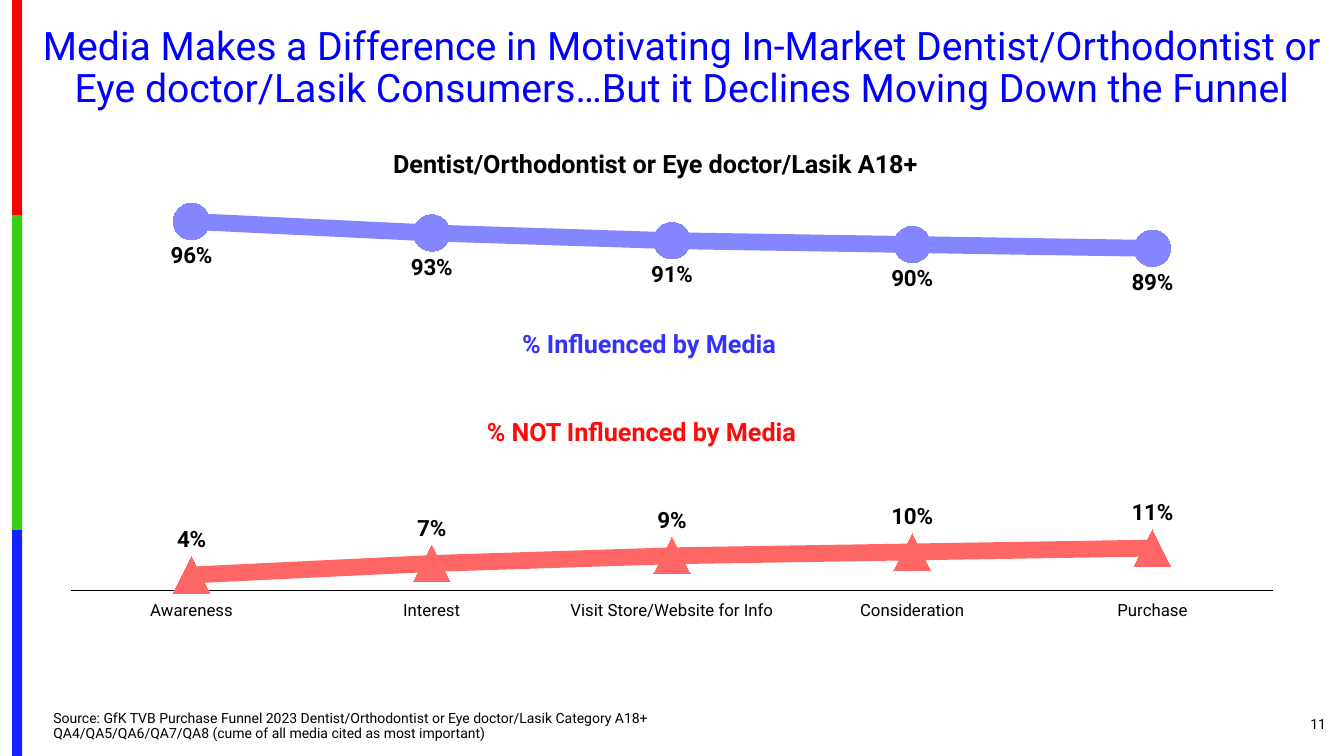
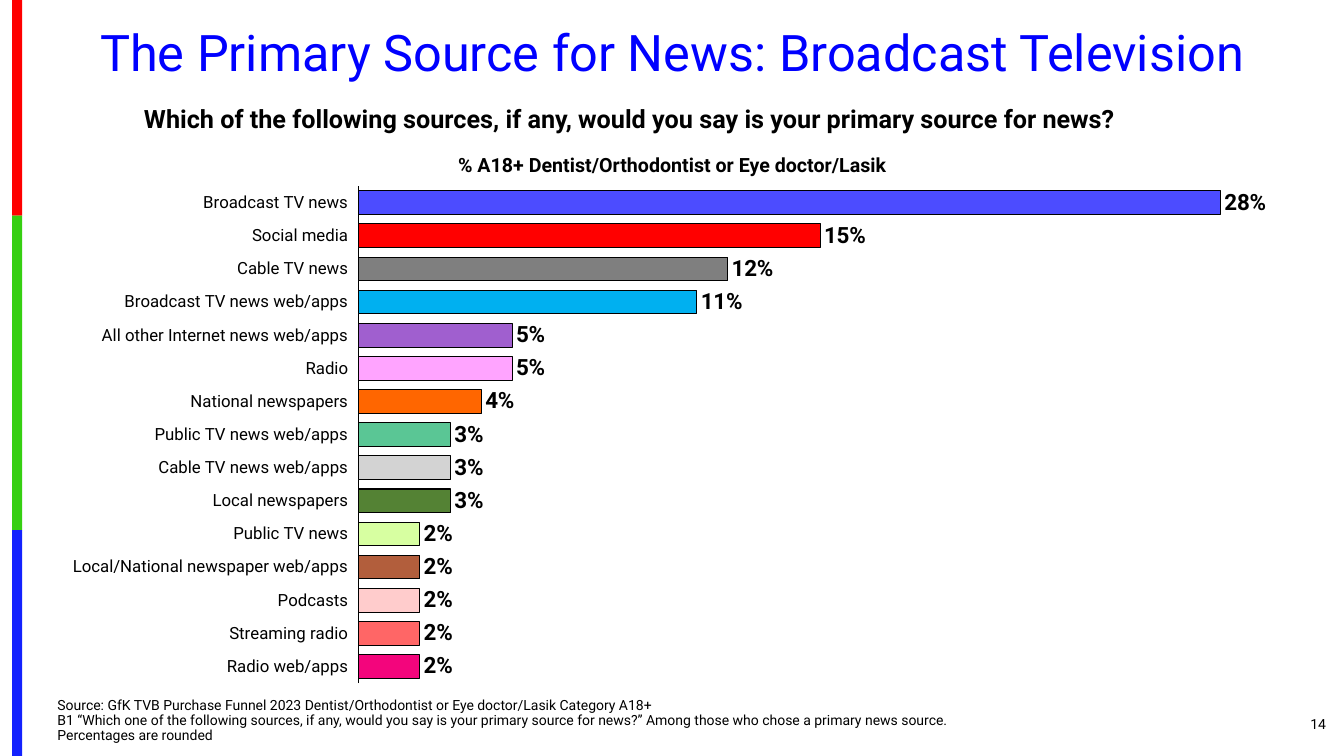
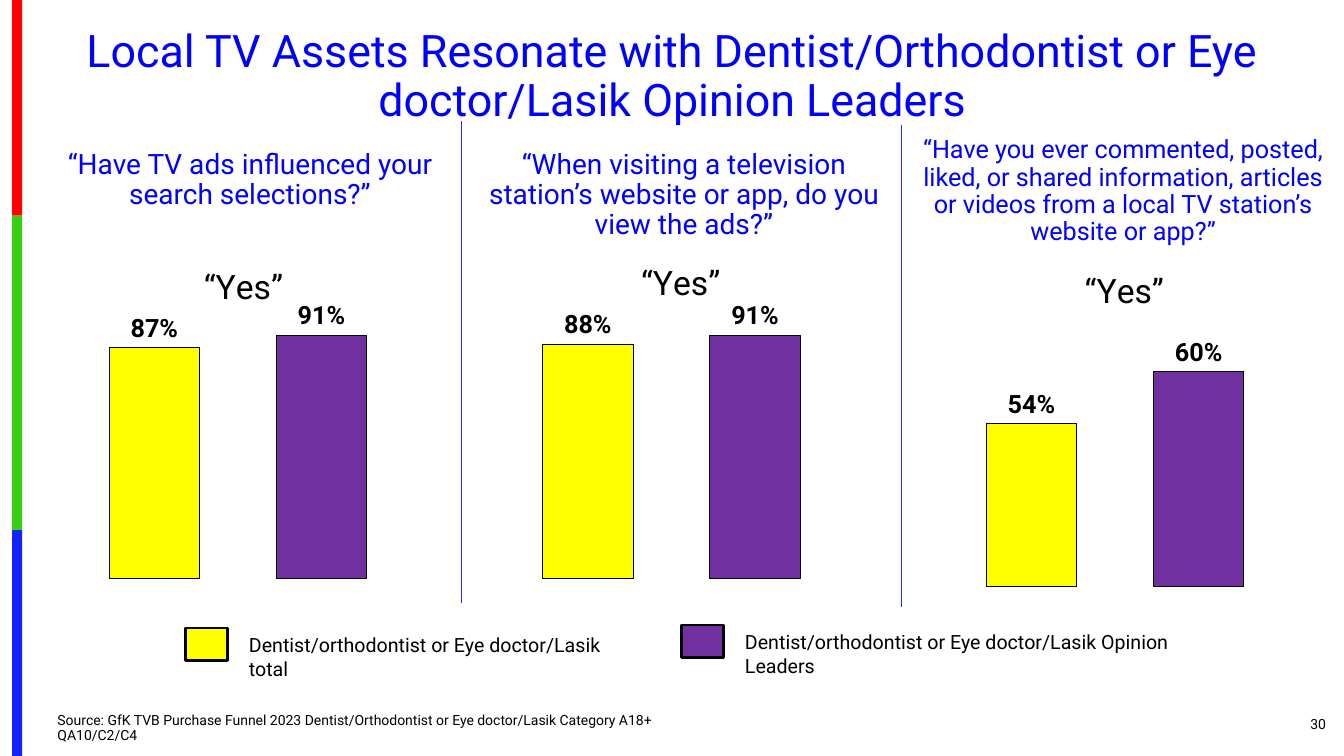
from lxml.etree import SubElement
from pptx import Presentation
from pptx.chart.data import CategoryChartData
from pptx.dml.color import RGBColor
from pptx.enum.chart import XL_CHART_TYPE as ChartType
from pptx.enum.chart import XL_LABEL_POSITION as LabelPosition
from pptx.enum.chart import XL_MARKER_STYLE as Marker
from pptx.enum.chart import XL_TICK_LABEL_POSITION as TickLabel
from pptx.enum.chart import XL_TICK_MARK as TickMark
from pptx.enum.shapes import MSO_CONNECTOR as Connector
from pptx.enum.shapes import MSO_SHAPE as Shape
from pptx.enum.text import MSO_ANCHOR as Anchor
from pptx.enum.text import MSO_AUTO_SIZE as AutoSize
from pptx.enum.text import PP_ALIGN as Align
from pptx.oxml import parse_xml
from pptx.oxml.ns import nsdecls, qn
from pptx.util import Emu, Pt

EMU_PER_PX = 9144
FONT = "Roboto"
BLACK = RGBColor(0x00, 0x00, 0x00)
TITLE_BLUE = RGBColor(0x00, 0x00, 0xFF)
DIVIDER_BLUE = RGBColor(0x2D, 0x2D, 0xFE)
INFLUENCED = RGBColor(0x33, 0x33, 0xFF)
INFLUENCED_LIGHT = RGBColor(0x85, 0x85, 0xFF)
NOT_INFLUENCED = RGBColor(0xFF, 0x09, 0x09)
NOT_INFLUENCED_LIGHT = RGBColor(0xFF, 0x66, 0x66)
YELLOW = RGBColor(0xFF, 0xFF, 0x00)
PURPLE = RGBColor(0x70, 0x30, 0xA0)
BAND_RED = RGBColor(0xFE, 0x00, 0x00)
BAND_GREEN = RGBColor(0x36, 0xCF, 0x12)
BAND_BLUE = RGBColor(0x13, 0x22, 0xFE)

BANDS = [(0, 214, BAND_RED), (214, 526, BAND_GREEN), (526, 750, BAND_BLUE)]
SOURCE = ("Source: GfK TVB Purchase Funnel 2023 Dentist/Orthodontist "
          "or Eye doctor/Lasik Category A18+\n")

NEWS_SOURCES = [
    ("Broadcast TV news", 0.28, RGBColor(0x4C, 0x4C, 0xFF)),
    ("Social media", 0.15, RGBColor(0xFF, 0x00, 0x00)),
    ("Cable TV news", 0.12, RGBColor(0x7F, 0x7F, 0x7F)),
    ("Broadcast TV news web/apps", 0.11, RGBColor(0x00, 0xB0, 0xF0)),
    ("All other Internet news web/apps", 0.05, RGBColor(0xA0, 0x5F, 0xCF)),
    ("Radio", 0.05, RGBColor(0xFF, 0xA4, 0xFF)),
    ("National newspapers", 0.04, RGBColor(0xFF, 0x66, 0x00)),
    ("Public TV news web/apps", 0.03, RGBColor(0x5A, 0xC6, 0x95)),
    ("Cable TV news web/apps", 0.03, RGBColor(0xD3, 0xD3, 0xD3)),
    ("Local newspapers", 0.03, RGBColor(0x54, 0x82, 0x34)),
    ("Public TV news", 0.02, RGBColor(0xD7, 0xFF, 0xA1)),
    ("Local/National newspaper web/apps", 0.02, RGBColor(0xB2, 0x5E, 0x3C)),
    ("Podcasts", 0.02, RGBColor(0xFF, 0xCC, 0xCC)),
    ("Streaming radio", 0.02, RGBColor(0xFF, 0x66, 0x66)),
    ("Radio web/apps", 0.02, RGBColor(0xF3, 0x05, 0x7C)),
]


def px(*lengths):
    return [Emu(length * EMU_PER_PX) for length in lengths]


class Deck:
    def __init__(self):
        self.presentation = Presentation()
        self.presentation.slide_width, self.presentation.slide_height = px(1333, 750)
        self.layout = self.presentation.slide_layouts[1]
        self.slide = None

    def start(self, number, title, title_box, title_size, source, source_box):
        first = self.slide is None
        self.slide = self.presentation.slides.add_slide(self.layout)
        if first:
            self.layout_bands()
        self.placeholder(self.slide.shapes.title, title, title_box, title_size,
                         TITLE_BLUE, Align.CENTER, Anchor.TOP)
        self.placeholder(self.slide.placeholders[1], SOURCE + source, source_box, 10,
                         BLACK, Align.LEFT, Anchor.BOTTOM)
        self.text(str(number), (1217, 698, 108, 40), 10, align=Align.RIGHT,
                  anchor=Anchor.MIDDLE)

    def layout_bands(self):
        for index, (top, bottom, color) in enumerate(BANDS):
            band = self.box((12, top, 10, bottom - top), color)
            band.element.nvSpPr.cNvPr.set("id", str(100 + index))
            self.layout.shapes.element.append(band.element)

    def placeholder(self, shape, text, box, size, color, align, anchor):
        shape.left, shape.top, shape.width, shape.height = px(*box)
        paragraph = self.fill_text(shape.text_frame, text, size, color, False,
                                   align, anchor, 0.9)
        properties = paragraph._p.get_or_add_pPr()
        properties.set("marL", "0")
        properties.set("indent", "0")
        SubElement(properties, qn("a:buNone"))

    def text(self, text, box, size, color=BLACK, bold=False, align=Align.LEFT,
             anchor=Anchor.TOP, spacing=1.0):
        shape = self.slide.shapes.add_textbox(*px(*box))
        self.fill_text(shape.text_frame, text, size, color, bold, align, anchor, spacing)

    def fill_text(self, frame, text, size, color, bold, align, anchor, spacing):
        frame.word_wrap = True
        frame.auto_size = AutoSize.NONE
        frame.vertical_anchor = anchor
        paragraph = frame.paragraphs[0]
        paragraph.alignment = align
        paragraph.line_spacing = spacing
        paragraph.space_before = Pt(0)
        for index, line in enumerate(text.split("\n")):
            if index:
                paragraph.add_line_break()
            run = paragraph.add_run()
            run.text = line
            self.style_font(run.font, size, color, bold)
        return paragraph

    def style_font(self, font, size, color=BLACK, bold=False):
        font.name = FONT
        font.size = Pt(size)
        font.bold = bold
        font.color.rgb = color

    def box(self, box, fill, line_width=0):
        shape = self.slide.shapes.add_shape(Shape.RECTANGLE, *px(*box))
        shape.shadow.inherit = False
        self.outline(shape, fill, line_width)
        return shape

    def outline(self, formatted, fill, line_width):
        formatted.fill.solid()
        formatted.fill.fore_color.rgb = fill
        if line_width:
            formatted.line.color.rgb = BLACK
            formatted.line.width = Pt(line_width)
        else:
            formatted.line.fill.background()

    def divider(self, x, top, bottom):
        line = self.slide.shapes.add_connector(Connector.STRAIGHT, *px(x, top, x, bottom))
        line.line.color.rgb = DIVIDER_BLUE
        line.line.width = Pt(0.75)
        SubElement(line.element.spPr, qn("a:effectLst"))

    def chart(self, kind, box, categories, rows, value_range):
        data = CategoryChartData(number_format="0%")
        data.categories = categories
        for index, values in enumerate(rows, 1):
            data.add_series(f"Series {index}", values)
        chart = self.slide.shapes.add_chart(kind, *px(*box), data).chart
        chart.has_legend = False
        chart.has_title = False
        self.style_font(chart.font, 10)
        values_axis, category_axis = chart.value_axis, chart.category_axis
        values_axis.minimum_scale, values_axis.maximum_scale = value_range
        values_axis.has_major_gridlines = False
        values_axis.visible = False
        category_axis.major_tick_mark = TickMark.NONE
        category_axis.tick_label_position = TickLabel.LOW
        category_axis.format.line.color.rgb = BLACK
        category_axis.format.line.width = Pt(0.75)
        self.style_font(category_axis.tick_labels.font, 12)
        chart.plots[0].vary_by_categories = False
        return chart

    def labels(self, series, size, position):
        labels = series.data_labels
        labels.show_value = True
        labels.number_format = "0%"
        labels.number_format_is_linked = False
        labels.position = position
        self.style_font(labels.font, size, bold=True)

    def line_chart(self, box, categories, lines):
        chart = self.chart(ChartType.LINE_MARKERS, box, categories,
                           [line[0] for line in lines], (0, 1))
        for series, (_, color, marker, position) in zip(chart.series, lines):
            series.smooth = False
            series.format.line.color.rgb = color
            series.format.line.width = Pt(12)
            series.marker.style = marker
            series.marker.size = 26
            self.outline(series.marker.format, color, 0)
            self.labels(series, 16, position)

    def bar_chart(self, kind, box, categories, values, colors, value_range, gap,
                  label_size, plot):
        chart = self.chart(kind, box, categories, [values], value_range)
        chart.plots[0].gap_width = gap
        series = chart.series[0]
        self.outline(series.format, INFLUENCED, 0.75)
        for index, color in enumerate(colors):
            self.outline(series.points[index].format, color, 0.75)
        self.labels(series, label_size, LabelPosition.OUTSIDE_END)
        self.place(chart.element.find(".//" + qn("c:plotArea")), 0, plot)
        return chart

    def chart_title(self, chart, text, position):
        frame = chart.chart_title.text_frame
        run = frame.paragraphs[0].add_run()
        run.text = text
        self.style_font(run.font, 24)
        chart.chart_title.include_in_layout = False
        self.place(chart.element.find(".//" + qn("c:title")), 1, position)

    def place(self, parent, index, fractions):
        old = parent.find(qn("c:layout"))
        if old is not None:
            parent.remove(old)
        layout = parse_xml(f"<c:layout {nsdecls('c')}><c:manualLayout/></c:layout>")
        settings = [("xMode", "edge"), ("yMode", "edge")]
        settings += zip("xywh", fractions)
        if len(fractions) == 4:
            settings.insert(0, ("layoutTarget", "inner"))
        for name, value in settings:
            SubElement(layout[0], qn("c:" + name)).set("val", str(value))
        parent.insert(index, layout)


def funnel_slide(deck):
    deck.start(11, "Media Makes a Difference in Motivating In-Market Dentist/Orthodontist "
               "or Eye doctor/Lasik Consumers…But it Declines Moving Down the Funnel",
               (19, 21, 1314, 95), 28,
               "QA4/QA5/QA6/QA7/QA8 (cume of all media cited as most important)",
               (43, 701, 945, 40))
    deck.line_chart(
        (46, 196, 1241, 428),
        ["Awareness", "Interest", "Visit Store/Website for Info", "Consideration",
         "Purchase"],
        [((0.96, 0.93, 0.91, 0.9, 0.89), INFLUENCED_LIGHT, Marker.CIRCLE,
          LabelPosition.BELOW),
         ((0.04, 0.07, 0.09, 0.1, 0.11), NOT_INFLUENCED_LIGHT, Marker.TRIANGLE,
          LabelPosition.ABOVE)])
    deck.text("% Influenced by Media", (508, 321, 317, 40), 18, INFLUENCED, True)
    deck.text("% NOT Influenced by Media", (473, 408, 378, 40), 18, NOT_INFLUENCED, True)
    deck.text("Dentist/Orthodontist or Eye doctor/Lasik A18+", (380, 142, 621, 40), 18,
              bold=True)


def news_slide(deck):
    deck.start(14, "The Primary Source for News: Broadcast Television",
               (46, 23, 1242, 65), 36,
               "B1 “Which one of the following sources, if any, would you say is your "
               "primary source for news?” Among those who chose a primary news source. "
               "Percentages are rounded", (47, 687, 945, 56))
    deck.text("Which of the following sources, if any, would you say is your primary "
              "source for news?", (133, 98, 1114, 40), 18, bold=True)
    names, shares, colors = zip(*NEWS_SOURCES)
    chart = deck.bar_chart(ChartType.BAR_CLUSTERED, (25, 137, 1300, 561), names, shares,
                           colors, (0, 0.3), 40, 16, (0.254, 0.085, 0.705, 0.879))
    chart.category_axis.reverse_order = True
    deck.text("% A18+ Dentist/Orthodontist or Eye doctor/Lasik", (408, 147, 518, 34), 14,
              bold=True, align=Align.CENTER)


def leaders_slide(deck):
    deck.start(30, "Local TV Assets Resonate with Dentist/Orthodontist or Eye doctor/Lasik "
               "Opinion Leaders", (46, 24, 1242, 107), 32, "QA10/C2/C4",
               (47, 703, 1078, 40))
    questions = [
        ("“Have TV ads influenced your search selections?”", (52, 144, 392, 71), 20,
         (55, 238), (0.87, 0.91), (0.1, 1), 0.19, (0.39, 0.05)),
        ("“When visiting a television station’s website or app, do you view the ads?”",
         (472, 144, 413, 101), 20,
         (485, 238), (0.88, 0.91), (0.1, 1), 0.19, (0.4, 0.04)),
        ("“Have you ever commented, posted, liked, or shared information, articles or "
         "videos from a local TV station’s website or app?”", (894, 131, 440, 119), 18,
         (925, 246), (0.54, 0.6), (0.35, 0.65), 0.225, (0.4, 0.04)),
    ]
    for question, box, size, corner, values, value_range, plot_top, title_at in questions:
        chart = deck.bar_chart(ChartType.COLUMN_CLUSTERED, (*corner, 362, 357), ["1", "2"],
                               values, (YELLOW, PURPLE), value_range, 85, 18,
                               (0.042, plot_top, 0.916, round(0.941 - plot_top, 3)))
        chart.category_axis.visible = False
        deck.chart_title(chart, "“Yes”", title_at)
        deck.text(question, box, size, TITLE_BLUE, align=Align.CENTER, spacing=0.9)
    for x, top in [(458, 120), (894, 124)]:
        deck.divider(x, top, top + 478)
    legend = [("total", 184, 623, 408, YELLOW), ("Opinion Leaders", 676, 620, 508, PURPLE)]
    for group, left, top, width, color in legend:
        deck.box((left, top, 42, 32), color, 2)
        deck.text("Dentist/orthodontist or Eye doctor/Lasik " + group,
                  (left + 53, top, width, 54), 14)


def main():
    deck = Deck()
    funnel_slide(deck)
    news_slide(deck)
    leaders_slide(deck)
    deck.presentation.save("out.pptx")


if __name__ == "__main__":
    main()
